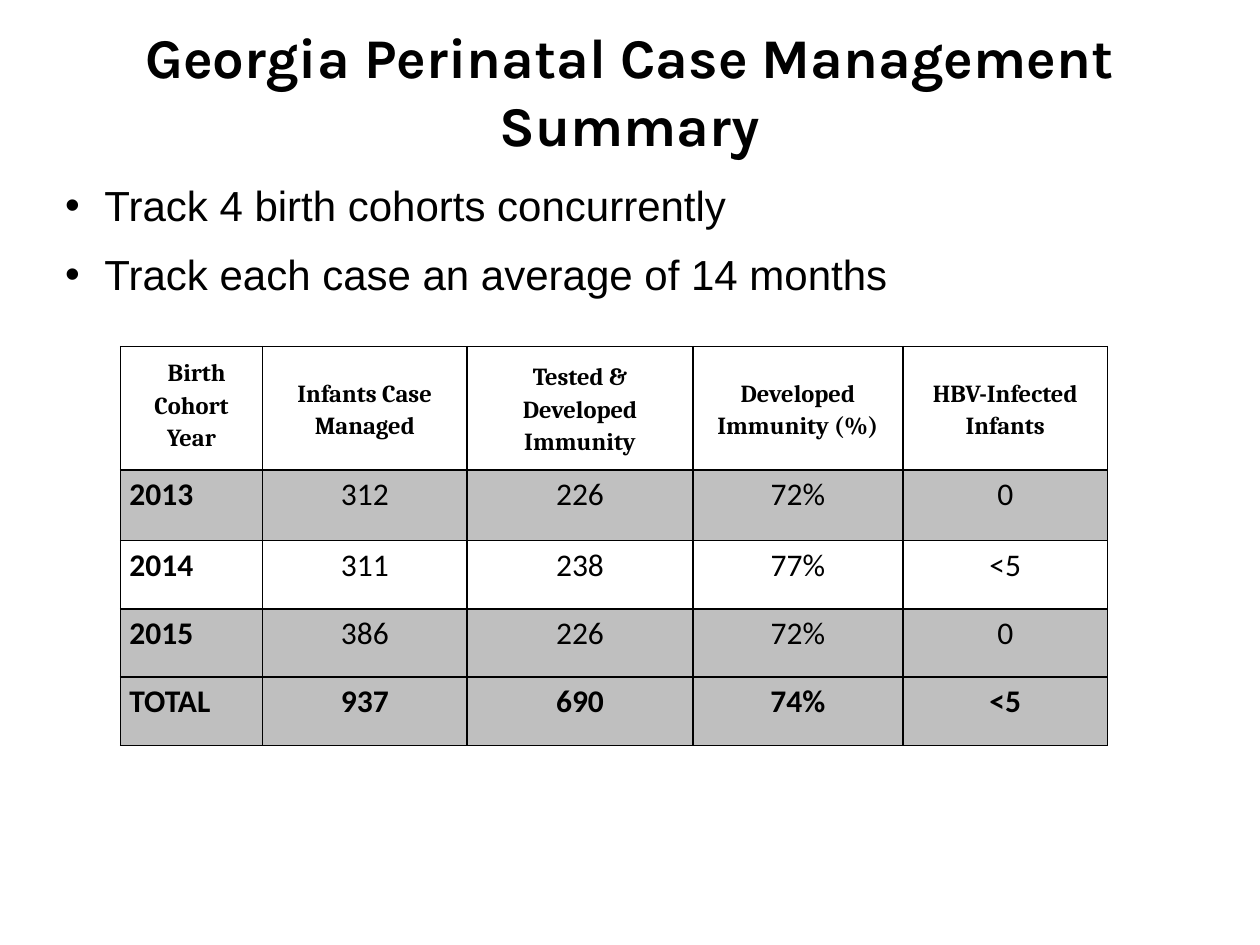
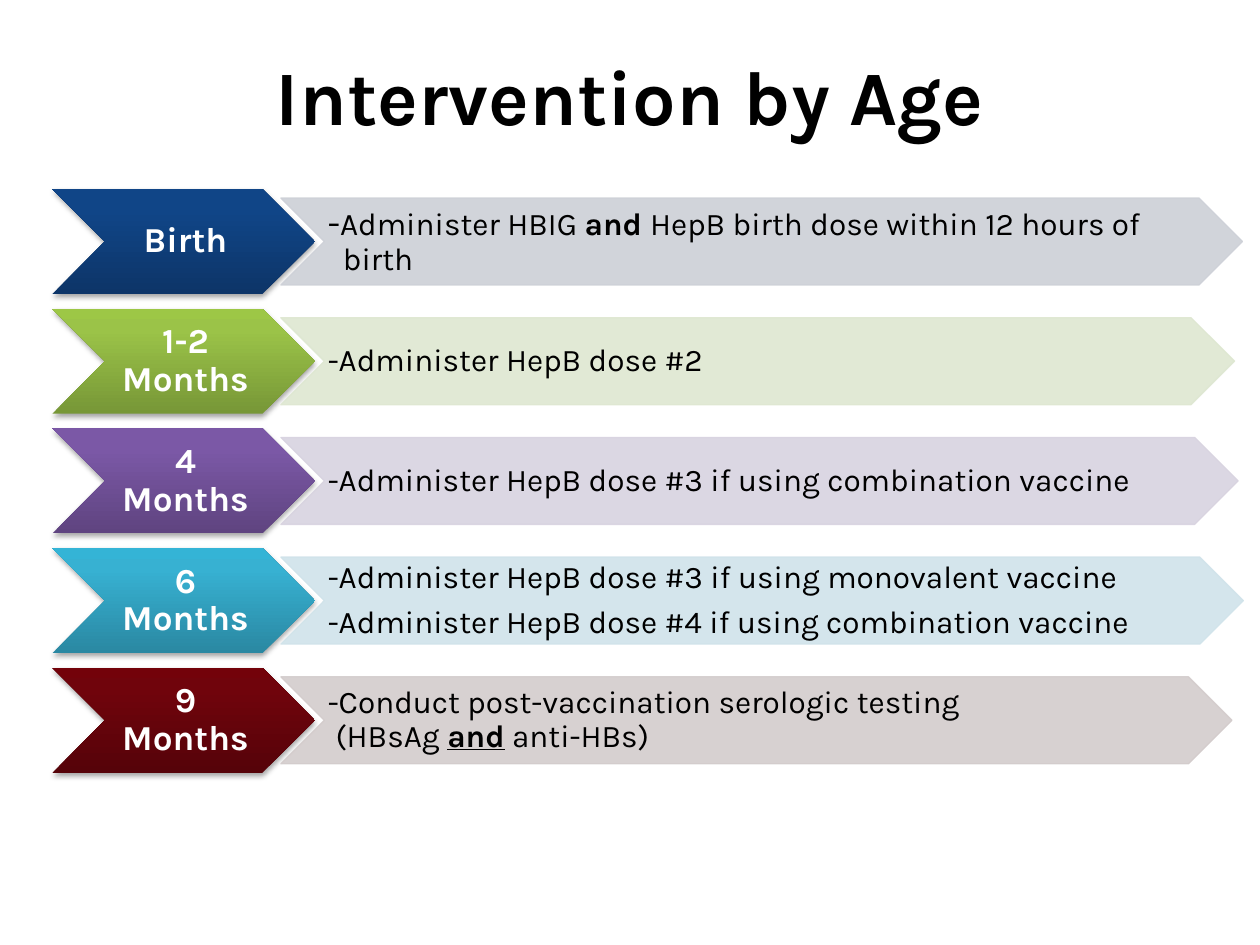
from copy import deepcopy

from lxml import etree
from pptx import Presentation
from pptx.dml.color import RGBColor
from pptx.enum.shapes import MSO_SHAPE
from pptx.enum.text import MSO_ANCHOR, MSO_AUTO_SIZE, PP_ALIGN
from pptx.oxml import parse_xml
from pptx.oxml.ns import nsdecls, qn
from pptx.util import Pt

# Shared look
BLACK = RGBColor(0x00, 0x00, 0x00)
WHITE = RGBColor(0xFF, 0xFF, 0xFF)
SILVER = RGBColor(0xC0, 0xC0, 0xC0)
GREY = RGBColor(0xBF, 0xBF, 0xBF)
KARLA, ARIAL, CAMBRIA, CALIBRI = "Karla", "Arial", "Cambria", "Calibri"
LAYOUT_CONTENT, LAYOUT_TITLE = 1, 5

# Cohort table
COHORT_WIDTHS = [81, 117, 129, 120, 117]
COHORT_HEIGHTS = [70.5, 40.5, 39, 39, 39]
COHORT_ROWS = [
    ["Birth Cohort\nYear", "Infants Case Managed", "Tested & Developed Immunity",
     "Developed Immunity (%)", "HBV-Infected Infants"],
    ["2013", "312", "226", "72%", "0"],
    ["2014", "311", "238", "77%", "<5"],
    ["2015", "386", "226", "72%", "0"],
    ["TOTAL", "937", "690", "74%", "<5"],
]
COHORT_FILLS = [WHITE, SILVER, WHITE, GREY, GREY]

# Age steps: label, gradient from bottom to top, band colour, band width,
# hanging indent, paragraphs of (text, format) spans
BOLD = {"bold": True}
AGE_STEPS = [
    ("Birth", ("0D3568", "104587", "0E458A"), "CDD0D7", 549.5, 8.6,
     [[("-", {"size": 20}), ("Administer HBIG ", {}), ("and ", BOLD),
       ("HepB birth dose within 12 hours of\nbirth", {})]]),
    ("1-2 Months", ("779737", "9BC348", "9DC746"), "DEE7D1", 545, 0,
     [[("-Administer HepB dose #2", {})]]),
    ("4 Months", ("5F4480", "7B58A6", "7C57A8"), "D8D3E0", 547, 0,
     [[("-Administer HepB dose #3 if using combination vaccine", {})]]),
    ("6 Months", ("2A88A2", "37B1D2", "34B4D6"), "D0E3EA", 550, 0,
     [[("-Administer HepB dose #3 if using monovalent vaccine", {})],
      [("-Administer HepB dose #4 if using combination vaccine", {})]]),
    ("9 Months", ("560309", "70040C", "73020A"), "D3CCCC", 543.5, 4.4,
     [[("-Conduct post-vaccination serologic testing\n(HBsAg ", {}),
       ("and", {"bold": True, "underline": True}), (" anti-HBs)", {})]]),
]


def write(para, text, size=18, font=KARLA, color=BLACK, bold=False, underline=False):
    """Add text to a paragraph; a newline becomes a line break."""
    for number, line in enumerate(text.split("\n")):
        if number:
            para.add_line_break()
        span = para.add_run()
        span.text = line
        span.font.size = Pt(size)
        span.font.name = font
        span.font.color.rgb = color
        span.font.bold = bold
        span.font.underline = underline


def set_indent(para, left, first):
    props = para._p.get_or_add_pPr()
    props.set("marL", str(Pt(left)))
    props.set("indent", str(Pt(first)))
    return props


def next_para(frame, number):
    return frame.add_paragraph() if number else frame.paragraphs[0]


def place(shape, left, top, width, height):
    shape.left, shape.top, shape.width, shape.height = map(Pt, (left, top, width, height))


def set_title(page, text, top, size):
    title = page.shapes.title
    place(title, 12, top, 696, 78)
    frame = title.text_frame
    frame.auto_size = MSO_AUTO_SIZE.NONE
    frame.vertical_anchor = MSO_ANCHOR.MIDDLE
    para = frame.paragraphs[0]
    para.alignment = PP_ALIGN.CENTER
    write(para, text, size=size, bold=True)


def fill_list(body, box, items):
    place(body, *box)
    frame = body.text_frame
    frame.auto_size = MSO_AUTO_SIZE.NONE
    frame.vertical_anchor = MSO_ANCHOR.TOP
    for number, item in enumerate(items):
        para = next_para(frame, number)
        props = set_indent(para, 22.5, -22.5)
        etree.SubElement(props, qn("a:buFont")).set("typeface", ARIAL)
        etree.SubElement(props, qn("a:buChar")).set("char", "•")
        para.space_before = Pt(10.7 if number else 0)
        write(para, item, size=24, font=ARIAL)


def add_borders(cell):
    props = cell._tc.get_or_add_tcPr()
    for number, side in enumerate(("lnL", "lnR", "lnT", "lnB")):
        props.insert(number, parse_xml(
            f'<a:{side} {nsdecls("a")} w="{Pt(1)}"><a:solidFill>'
            f'<a:srgbClr val="{BLACK}"/></a:solidFill></a:{side}>'))


def fill_cell(cell, text, row, column):
    header, total = row == 0, row == len(COHORT_ROWS) - 1
    cell.fill.solid()
    cell.fill.fore_color.rgb = COHORT_FILLS[row]
    add_borders(cell)
    cell.margin_left = cell.margin_right = Pt(5)
    cell.margin_top = cell.margin_bottom = Pt(0)
    cell.vertical_anchor = MSO_ANCHOR.MIDDLE if header else MSO_ANCHOR.TOP
    for number, line in enumerate(text.split("\n")):
        para = next_para(cell.text_frame, number)
        para.line_spacing = 1.15
        para.alignment = PP_ALIGN.CENTER if header or column else PP_ALIGN.LEFT
        write(para, line, size=14 if header else 18, font=CAMBRIA if header else CALIBRI,
              bold=header or total or column == 0)


def add_cohort_table(page, left, top):
    frame = page.shapes.add_table(
        len(COHORT_HEIGHTS), len(COHORT_WIDTHS), Pt(left), Pt(top),
        Pt(sum(COHORT_WIDTHS)), Pt(sum(COHORT_HEIGHTS)))
    table = frame.table
    table.first_row = table.horz_banding = False
    for column, width in zip(table.columns, COHORT_WIDTHS):
        column.width = Pt(width)
    for row, height in zip(table.rows, COHORT_HEIGHTS):
        row.height = Pt(height)
    for row, texts in enumerate(COHORT_ROWS):
        for column, text in enumerate(texts):
            fill_cell(table.cell(row, column), text, row, column)
    # The corner label sits a little high, with its first line set in
    corner = table.cell(0, 0)
    corner.margin_bottom = Pt(4.5)
    set_indent(corner.text_frame.paragraphs[0], 0, 5.8)


def add_chevron(page, left, top, width, height):
    shape = page.shapes.add_shape(MSO_SHAPE.CHEVRON, *map(Pt, (left, top, width, height)))
    shape.shadow.inherit = False
    frame = shape.text_frame
    frame.word_wrap = True
    frame.vertical_anchor = MSO_ANCHOR.MIDDLE
    frame.margin_left, frame.margin_right = Pt(2), Pt(0)
    frame.margin_top = frame.margin_bottom = Pt(0.9)
    return shape


def shade(shape, colors):
    """Three-stop gradient, running from bottom to top."""
    fill = shape.fill
    fill.gradient()
    fill.gradient_angle = 90
    stop_list = shape._element.spPr.find(".//" + qn("a:gsLst"))
    stop_list.append(deepcopy(stop_list[-1]))
    for stop, position, color in zip(fill.gradient_stops, (0, 0.8, 1), colors):
        stop.position = position
        stop.color.rgb = RGBColor.from_string(color)


def add_soft_shadow(shape):
    effects = shape._element.spPr.find(qn("a:effectLst"))
    effects.append(parse_xml(
        f'<a:outerShdw {nsdecls("a")} blurRad="{Pt(3.1)}" dist="{Pt(1.8)}" dir="5400000" '
        f'rotWithShape="0"><a:srgbClr val="{BLACK}"><a:alpha val="35000"/></a:srgbClr>'
        '</a:outerShdw>'))


def add_age_step(page, left, top, step):
    label, gradient, band_color, band_width, hanging, paragraphs = step
    height, band_height = 60, 49.7

    # Age marker
    marker = add_chevron(page, left, top, 150, height)
    shade(marker, gradient)
    marker.line.fill.background()
    add_soft_shadow(marker)
    para = marker.text_frame.paragraphs[0]
    para.alignment = PP_ALIGN.CENTER
    para.line_spacing = 0.9
    write(para, label, size=20, color=WHITE, bold=True)

    # Band with the actions
    band = add_chevron(page, left + 130.5, top + (height - band_height) / 2,
                       band_width, band_height)
    band.fill.solid()
    band.line.width = Pt(0.75)
    for paint in (band.fill, band.line.fill):
        paint.solid()
        paint.fore_color.rgb = RGBColor.from_string(band_color)
    for color in band._element.spPr.iter(qn("a:srgbClr")):
        etree.SubElement(color, qn("a:alpha")).set("val", "90000")
    for number, spans in enumerate(paragraphs):
        para = next_para(band.text_frame, number)
        set_indent(para, hanging, -hanging)
        para.alignment = PP_ALIGN.LEFT
        para.line_spacing = 0.9
        para.space_before = Pt(6.3 if number else 0)
        for text, formats in spans:
            write(para, text, **formats)


def build_summary(deck):
    page = deck.slides.add_slide(deck.slide_layouts[LAYOUT_CONTENT])
    set_title(page, "Georgia Perinatal Case Management Summary", top=12.5, size=32)
    add_cohort_table(page, 69, 198)
    fill_list(page.placeholders[1], (30, 99, 657, 97),
              ["Track 4 birth cohorts concurrently", "Track each case an average of 14 months"])


def build_interventions(deck):
    page = deck.slides.add_slide(deck.slide_layouts[LAYOUT_TITLE])
    set_title(page, "Intervention by Age", top=15, size=44)
    for number, step in enumerate(AGE_STEPS):
        add_age_step(page, 30, 108 + number * 68.4, step)


def main():
    deck = Presentation()
    deck.slide_width, deck.slide_height = Pt(720), Pt(540)
    build_summary(deck)
    build_interventions(deck)
    deck.save("out.pptx")


if __name__ == "__main__":
    main()
